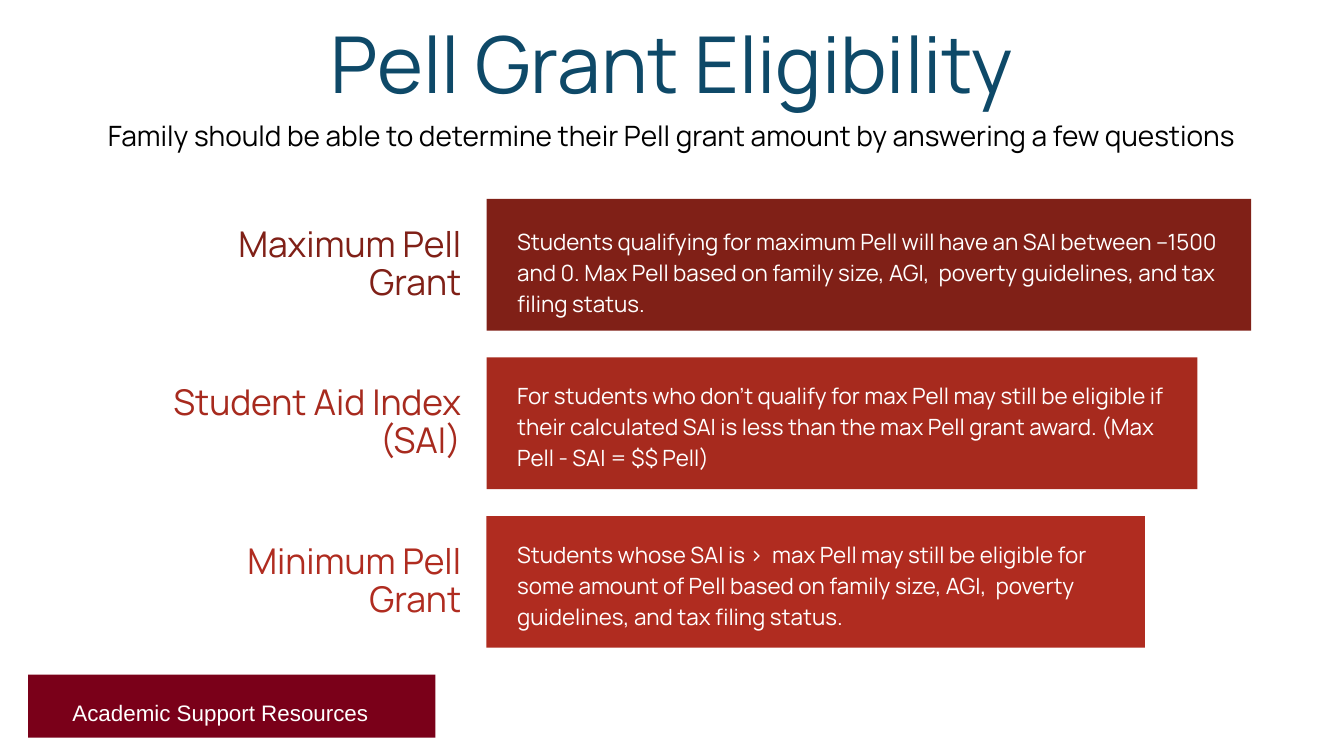
"""Build the Pell Grant eligibility slide."""
from pptx import Presentation
from pptx.dml.color import RGBColor
from pptx.enum.shapes import MSO_SHAPE
from pptx.enum.text import MSO_ANCHOR, PP_ALIGN
from pptx.util import Inches, Pt

RECT = MSO_SHAPE.RECTANGLE
TOP, MIDDLE = MSO_ANCHOR.TOP, MSO_ANCHOR.MIDDLE
LEFT, CENTER, RIGHT = PP_ALIGN.LEFT, PP_ALIGN.CENTER, PP_ALIGN.RIGHT

COLORS = {
    "title": "0E4968",
    "body": "000000",
    "light": "FFFFFF",
    "footer": "7A0019",
    "maximum": "802017",
    "index": "A72A1E",
    "minimum": "B02C20",
}
FONT = "Manrope"
FIRST_TOP, ROW_STEP, BAR_HEIGHT = 1.48, 1.18, 0.98
BAR_LEFT, LABEL_RIGHT = 3.62, 3.53

ROWS = [
    ("maximum", "Maximum Pell Grant", 2.18, 5.69, 0.04,
     "Students qualifying for maximum Pell will have an SAI between –1500 and 0. "
     "Max Pell based on family size, AGI,  poverty guidelines, and tax filing status."),
    ("index", "Student Aid Index (SAI)", 2.96, 5.29, 0.01,
     "For students who don’t qualify for max Pell may still be eligible if their "
     "calculated SAI is less than the max Pell grant award. (Max Pell - SAI = $$ Pell)"),
    ("minimum", "Minimum Pell Grant", 2.13, 4.9, 0.01,
     "Students whose SAI is >  max Pell may still be eligible for some amount of Pell "
     "based on family size, AGI,  poverty guidelines, and tax filing status."),
]


def add_bar(s, x, y, w, h, color):
    sp = s.shapes.add_shape(RECT, Inches(x), Inches(y), Inches(w), Inches(h))
    sp.shadow.inherit = False
    sp.fill.solid()
    sp.fill.fore_color.rgb = RGBColor.from_string(COLORS[color])
    sp.line.fill.background()


def add_text(s, box, text, size, color, align=LEFT, anchor=MIDDLE,
             spacing=1.0, margin=0.05, font=FONT):
    sp = s.shapes.add_textbox(*(Inches(v) for v in box))
    tf = sp.text_frame
    tf.word_wrap = True
    tf.vertical_anchor = anchor
    tf.margin_top = tf.margin_bottom = Inches(margin)
    tf.margin_left = tf.margin_right = Inches(0.1)
    p = tf.paragraphs[0]
    p.alignment = align
    p.line_spacing = spacing
    r = p.add_run()
    r.text = text
    r.font.size = Pt(size)
    r.font.name = font
    r.font.color.rgb = RGBColor.from_string(COLORS[color])


def add_row(s, y, color, label, label_width, bar_width, text_shift, text):
    add_text(s, (LABEL_RIGHT - label_width, y + 0.07, label_width, 0.84),
             label, 19, color, align=RIGHT, spacing=0.9)
    add_bar(s, BAR_LEFT, y, bar_width, BAR_HEIGHT, color)
    add_text(s, (BAR_LEFT + 0.13, y + text_shift, bar_width - 0.14, BAR_HEIGHT),
             text, 12, "light", spacing=1.15)


def main():
    prs = Presentation()
    prs.slide_width = Inches(10)
    prs.slide_height = Inches(10 * 9 / 16)
    s = prs.slides.add_slide(prs.slide_layouts[6])
    add_bar(s, 0.21, 5.02, 3.03, 0.47, "footer")
    add_text(s, (0.44, 5.1, 3.01, 0.32), "Academic Support Resources", 12,
             "light", anchor=TOP, margin=0.1, font="Arial")
    add_text(s, (0.34, 0.15, 9.32, 0.63), "Pell Grant Eligibility", 42,
             "title", align=CENTER, margin=0.1)
    add_text(s, (0.34, 0.78, 9.32, 1.04),
             "Family should be able to determine their Pell grant amount "
             "by answering a few questions",
             15, "body", align=CENTER, anchor=TOP, margin=0.1)
    for i, row in enumerate(ROWS):
        add_row(s, FIRST_TOP + i * ROW_STEP, *row)
    prs.save("out.pptx")


if __name__ == "__main__":
    main()
